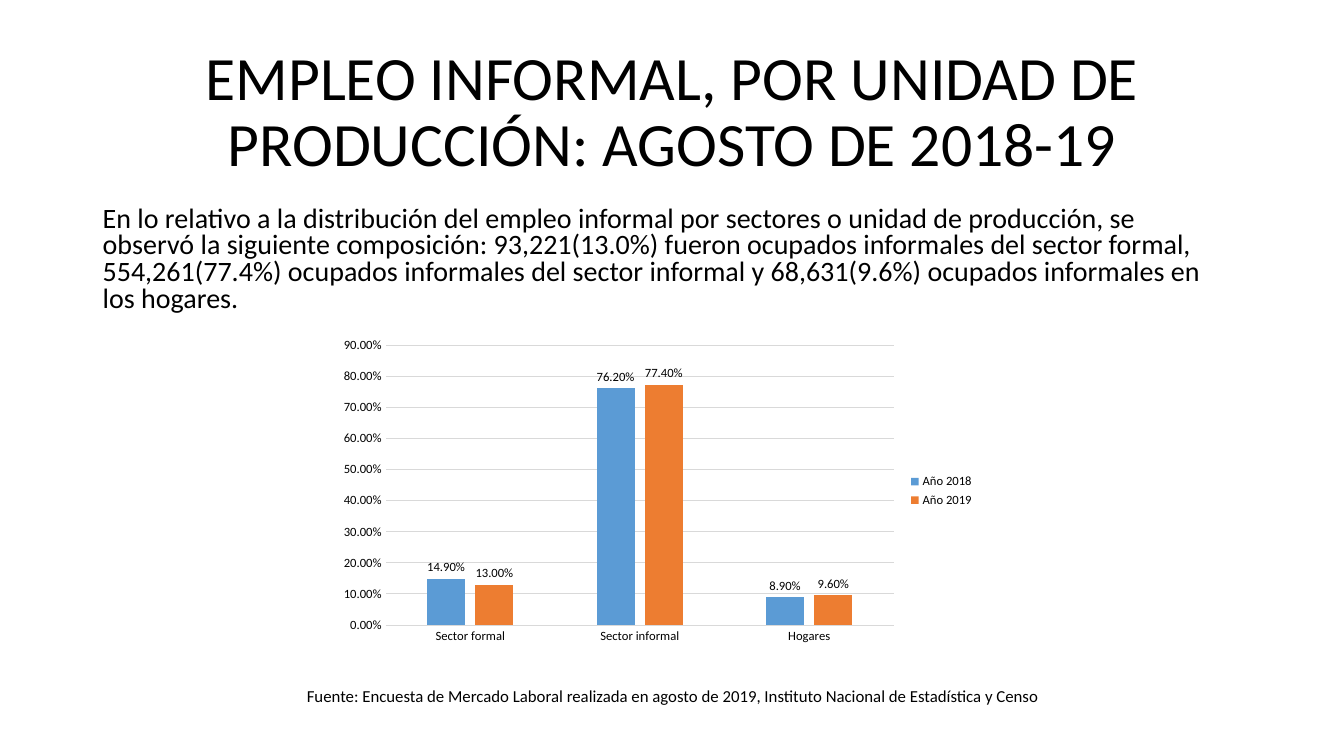
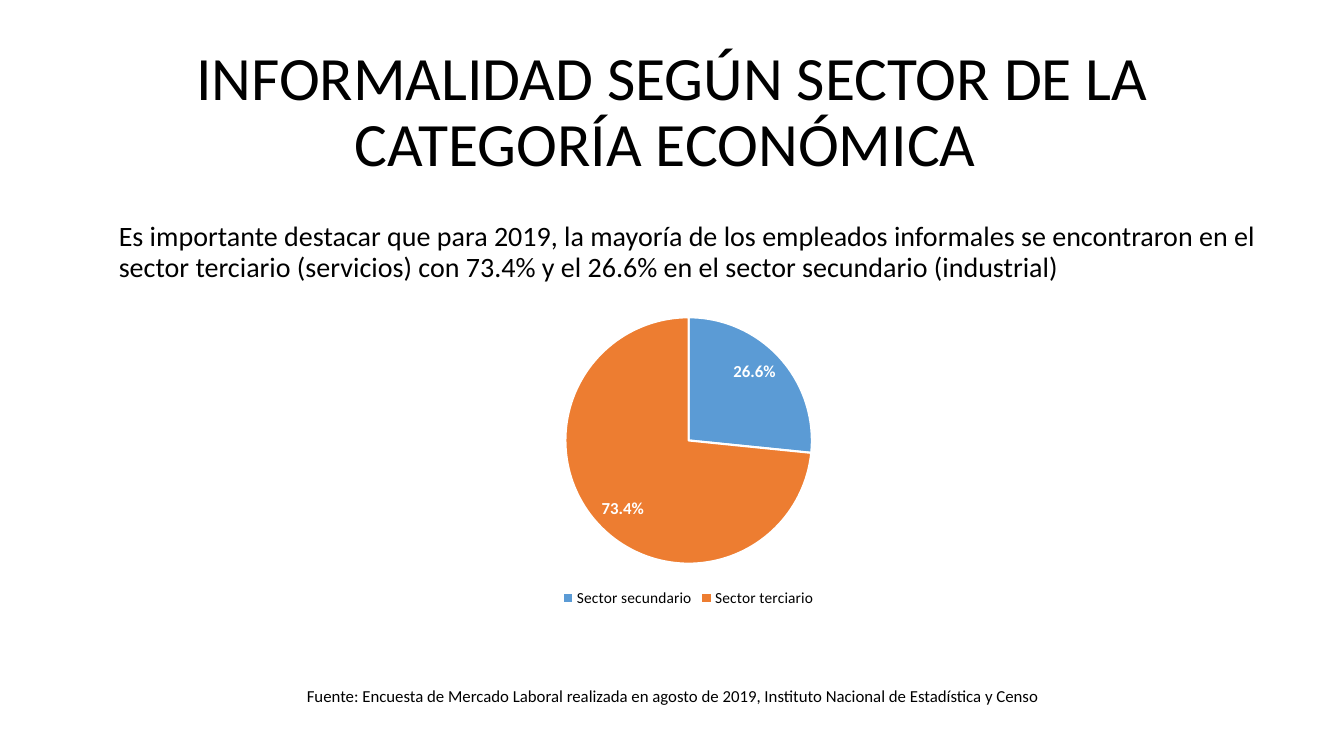
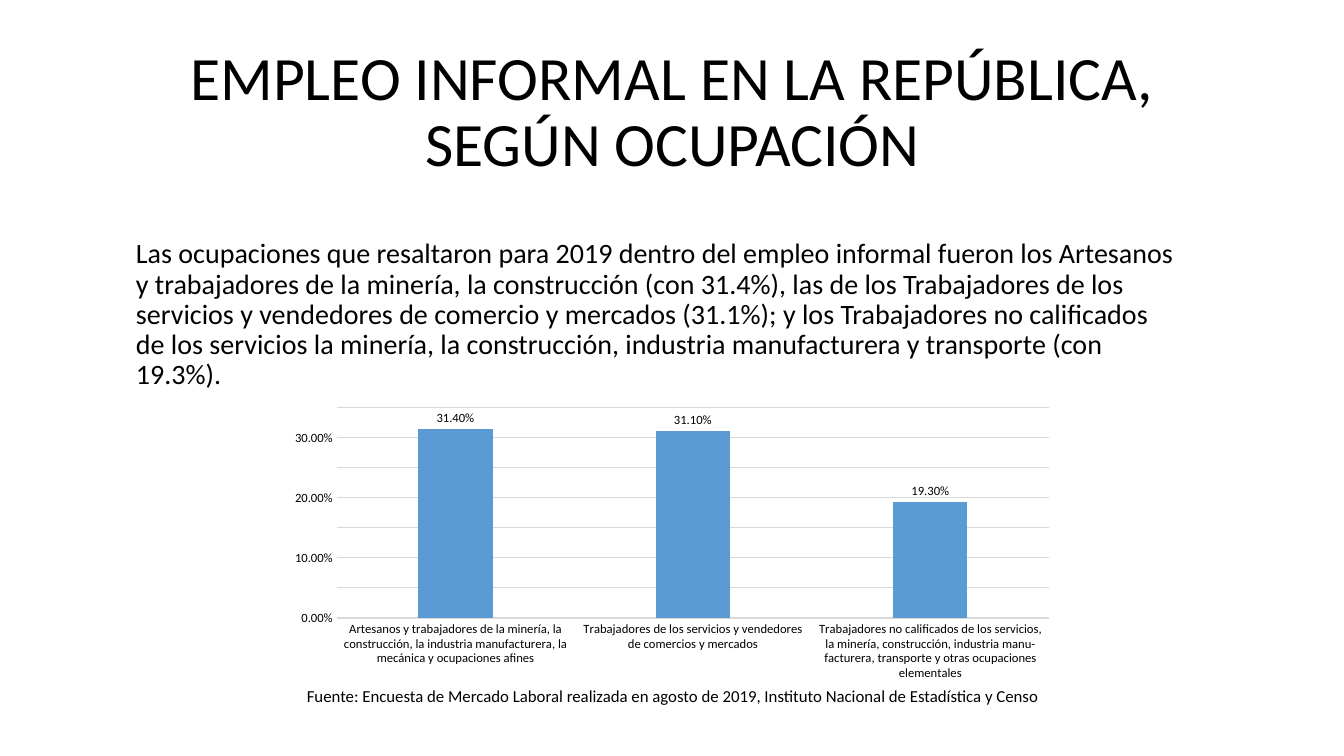
from copy import deepcopy
from dataclasses import dataclass

from pptx import Presentation
from pptx.chart.data import CategoryChartData
from pptx.dml.color import RGBColor
from pptx.enum.chart import XL_CHART_TYPE, XL_LABEL_POSITION, XL_LEGEND_POSITION, XL_TICK_MARK
from pptx.enum.text import MSO_ANCHOR, PP_ALIGN
from pptx.util import Inches, Pt

COLUMNS, PIE = XL_CHART_TYPE.COLUMN_CLUSTERED, XL_CHART_TYPE.PIE
OUTSIDE_END, INSIDE_END = XL_LABEL_POSITION.OUTSIDE_END, XL_LABEL_POSITION.INSIDE_END
LEGEND_RIGHT, LEGEND_BOTTOM = XL_LEGEND_POSITION.RIGHT, XL_LEGEND_POSITION.BOTTOM
NO_TICK = XL_TICK_MARK.NONE
LEFT, CENTER = PP_ALIGN.LEFT, PP_ALIGN.CENTER
TOP, MIDDLE = MSO_ANCHOR.TOP, MSO_ANCHOR.MIDDLE

SOURCE = ("Fuente: Encuesta de Mercado Laboral realizada en agosto de 2019, "
          "Instituto Nacional de Estadística y Censo ")


@dataclass(frozen=True)
class Theme:
    font: str = "Calibri"
    text: RGBColor = RGBColor(0, 0, 0)
    background: RGBColor = RGBColor(255, 255, 255)
    grid: RGBColor = RGBColor(0xD9, 0xD9, 0xD9)
    series: tuple = (RGBColor(0x5B, 0x9B, 0xD5), RGBColor(0xED, 0x7D, 0x31))
    title_size: int = 44
    body_size: int = 20
    source_size: int = 12
    chart_size: int = 10
    axis_size: int = 9
    pie_legend_size: int = 11
    pie_label_size: int = 12


class Deck:
    def __init__(self, theme):
        self.theme = theme
        self.presentation = Presentation()
        self.presentation.slide_width = Inches(13.33)
        self.presentation.slide_height = Inches(7.5)
        self.slide = None

    def new_slide(self, title):
        """Start a slide with the shared title and source line."""
        self.slide = self.presentation.slides.add_slide(self.presentation.slide_layouts[6])
        fill = self.slide.background.fill
        fill.solid()
        fill.fore_color.rgb = self.theme.background
        self.text(title, (0.92, 0.4, 11.5, 1.45), self.theme.title_size, CENTER, 0.9, anchor=MIDDLE)
        self.text(SOURCE, (2.93, 6.75, 7.49, 0.3), self.theme.source_size, CENTER)

    def text(self, text, box, size, align=LEFT, line_spacing=1.0, space_before=0, anchor=TOP):
        shape = self.slide.shapes.add_textbox(*map(Inches, box))
        frame = shape.text_frame
        frame.word_wrap = True
        frame.vertical_anchor = anchor
        paragraph = frame.paragraphs[0]
        paragraph.text = text
        paragraph.alignment = align
        paragraph.line_spacing = line_spacing
        paragraph.space_before = Pt(space_before)
        self.style_font(paragraph.font, size)

    def body(self, text, box, line_spacing=0.9):
        self.text(text, box, self.theme.body_size, LEFT, line_spacing, space_before=10)

    def style_font(self, font, size, color=None, bold=False):
        font.name = self.theme.font
        font.size = Pt(size)
        font.bold = bold
        font.color.rgb = color or self.theme.text

    def chart(self, kind, box, categories, series):
        data = CategoryChartData(number_format="0.00%")
        data.categories = categories
        for name, values in series:
            data.add_series(name, values)
        chart = self.slide.shapes.add_chart(kind, *map(Inches, box), data).chart
        chart.has_title = False
        chart.has_legend = False
        self.style_font(chart.font, self.theme.chart_size)
        return chart

    def legend(self, chart, position, size):
        chart.has_legend = True
        chart.legend.position = position
        chart.legend.include_in_layout = False
        self.style_font(chart.legend.font, size)

    def value_labels(self, plot, number_format, position, size, color=None, bold=False):
        plot.has_data_labels = True
        labels = plot.data_labels
        labels.show_value = True
        labels.show_percentage = False
        labels.number_format = number_format
        labels.number_format_is_linked = False
        labels.position = position
        self.style_font(labels.font, size, color, bold)

    def fill(self, element, color):
        element.format.fill.solid()
        element.format.fill.fore_color.rgb = color

    def grid_line(self, element):
        element.format.line.color.rgb = self.theme.grid
        element.format.line.width = Pt(0.75)

    def minor_grid(self, axis, unit):
        """Add minor gridlines that look like the major ones."""
        axis.minor_unit = unit
        axis.has_minor_gridlines = True
        element = axis._element
        line_style = element.xpath("c:majorGridlines/c:spPr")[0]
        element.xpath("c:minorGridlines")[0].append(deepcopy(line_style))

    def column_chart(self, box, categories, series, maximum, minor_unit=None):
        size = self.theme.axis_size
        chart = self.chart(COLUMNS, box, categories, series)
        plot = chart.plots[0]
        plot.vary_by_categories = False
        plot.gap_width = 219
        plot.overlap = -27
        for column_series, color in zip(plot.series, self.theme.series):
            self.fill(column_series, color)
        self.value_labels(plot, "0.00%", OUTSIDE_END, size)

        category_axis, value_axis = chart.category_axis, chart.value_axis
        for axis in (category_axis, value_axis):
            axis.major_tick_mark = axis.minor_tick_mark = NO_TICK
            self.style_font(axis.tick_labels.font, size)
        self.grid_line(category_axis)
        value_axis.format.line.fill.background()
        value_axis.minimum_scale = 0
        value_axis.maximum_scale = maximum
        value_axis.major_unit = 0.1
        value_axis.tick_labels.number_format = "0.00%"
        value_axis.tick_labels.number_format_is_linked = False
        value_axis.has_major_gridlines = True
        self.grid_line(value_axis.major_gridlines)
        if minor_unit:
            self.minor_grid(value_axis, minor_unit)
        if len(series) > 1:
            self.legend(chart, LEGEND_RIGHT, size)

    def pie_chart(self, box, categories, series):
        theme = self.theme
        chart = self.chart(PIE, box, categories, [series])
        plot = chart.plots[0]
        plot.vary_by_categories = True
        for index, color in enumerate(theme.series):
            point = plot.series[0].points[index]
            self.fill(point, color)
            point.format.line.color.rgb = theme.background
            point.format.line.width = Pt(1.5)
        self.value_labels(plot, "0.0%", INSIDE_END, theme.pie_label_size, theme.background, bold=True)
        self.legend(chart, LEGEND_BOTTOM, theme.pie_legend_size)


def main():
    deck = Deck(Theme())

    deck.new_slide("EMPLEO INFORMAL, POR UNIDAD DE PRODUCCIÓN: AGOSTO DE 2018-19")
    deck.body("En lo relativo a la distribución del empleo informal por sectores o unidad de "
              "producción, se observó la siguiente composición: 93,221(13.0%) fueron ocupados "
              "informales del sector formal, 554,261(77.4%) ocupados informales del sector informal "
              "y 68,631(9.6%) ocupados informales en los hogares.",
              (0.92, 2, 11.25, 1.28), line_spacing=0.8)
    deck.column_chart((3.28, 3.29, 6.51, 3.16),
                      ["Sector formal", "Sector informal", "Hogares"],
                      [("Año 2018 ", (0.149, 0.762, 0.089)), ("Año 2019", (0.13, 0.774, 0.096))],
                      maximum=0.9)

    deck.new_slide("INFORMALIDAD SEGÚN SECTOR DE LA CATEGORÍA ECONÓMICA ")
    deck.body("Es importante destacar que para 2019, la mayoría de los empleados informales se "
              "encontraron en el sector terciario (servicios) con 73.4% y el 26.6% en el sector "
              "secundario (industrial)", (1.08, 2.16, 11.5, 4.76))
    deck.pie_chart((3.54, 3.01, 6.58, 3.06), ["Sector secundario", "Sector terciario"],
                   ("Series 1", (0.266, 0.734)))

    deck.new_slide("EMPLEO INFORMAL EN LA REPÚBLICA, SEGÚN OCUPACIÓN")
    deck.column_chart((2.77, 3.99, 7.79, 2.82),
                      ["Artesanos y trabajadores de la minería, la construcción, la industria "
                       "manufacturera, la mecánica y ocupaciones afines",
                       "Trabajadores de los servicios y vendedores de comercios y mercados",
                       "Trabajadores no calificados de los servicios, la minería, construcción, "
                       "industria manu- facturera, transporte y otras ocupaciones elementales"],
                      [("Series 1", (0.314, 0.311, 0.193))], maximum=0.35, minor_unit=0.05)
    deck.body("Las ocupaciones que resaltaron para 2019 dentro del empleo informal fueron los "
              "Artesanos y trabajadores de la minería, la construcción (con 31.4%), las de los "
              "Trabajadores de los servicios y vendedores de comercio y mercados (31.1%); y los "
              "Trabajadores no calificados de los servicios la minería, la construcción, industria "
              "manufacturera y transporte (con 19.3%).", (1.25, 2.33, 10.54, 1.96))

    deck.presentation.save("out.pptx")


if __name__ == "__main__":
    main()
